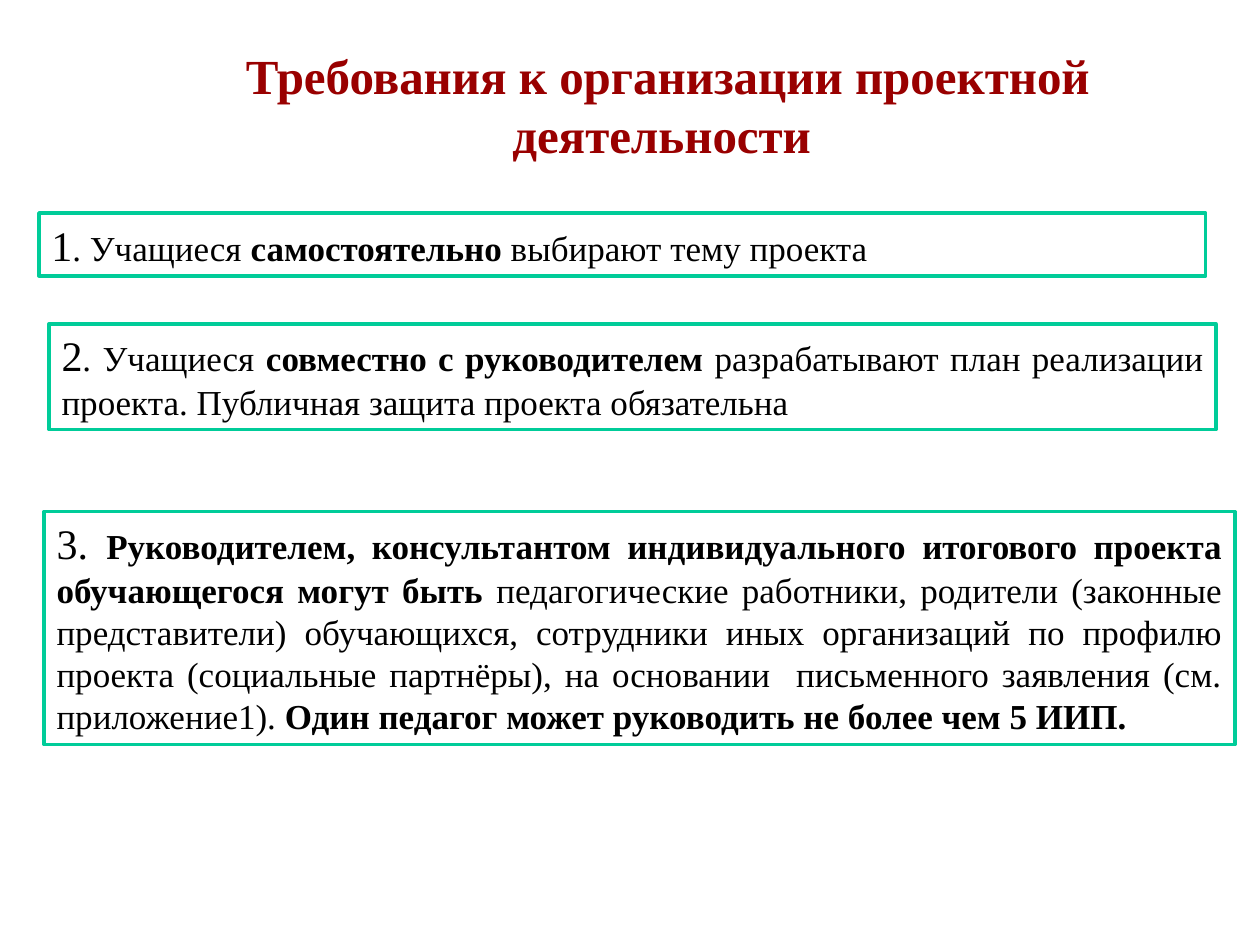
from pptx import Presentation
from pptx.dml.color import RGBColor
from pptx.enum.shapes import MSO_SHAPE as SHAPE
from pptx.enum.text import MSO_ANCHOR as ANCHOR, MSO_AUTO_SIZE as AUTO, PP_ALIGN as ALIGN
from pptx.util import Inches, Pt

FONT = "Times New Roman"
TITLE_RED, GREEN, WHITE, BLACK = "990000", "00CC99", "FFFFFF", "000000"

# left, top, width, height, runs as (text, size, bold)
REQUIREMENTS = [
    (0.31, 1.69, 9.26, 0.5, [
        ("1", 24, False),
        (". Учащиеся ", 20, False),
        ("самостоятельно", 20, True),
        (" выбирают тему проекта", 20, False)]),
    (0.39, 2.57, 9.26, 0.84, [
        ("2", 24, False),
        (". Учащиеся ", 20, False),
        ("совместно с руководителем ", 20, True),
        ("разрабатывают план реализации проекта. "
         "Публичная защита проекта обязательна ", 20, False)]),
    (0.35, 4.06, 9.45, 1.85, [
        ("3. ", 24, False),
        ("Руководителем, консультантом индивидуального итогового проекта "
         "обучающегося могут быть ", 20, True),
        ("педагогические работники, родители (законные представители) "
         "обучающихся, сотрудники иных организаций по профилю проекта "
         "(социальные партнёры), на основании  письменного заявления "
         "(см. приложение1). ", 20, False),
        ("Один педагог может руководить не более чем 5 ИИП.", 20, True)]),
]


def rgb(value):
    return RGBColor.from_string(value)


class SlideBuilder:
    def __init__(self, slide, font):
        self.s = slide
        self.font = font

    def format_run(self, r, size, bold, color):
        r.font.name = self.font
        r.font.size = Pt(size)
        r.font.bold = bold
        r.font.color.rgb = rgb(color)

    def title(self, left, top, width, height, text):
        sp = self.s.shapes.add_textbox(*map(Inches, (left, top, width, height)))
        tf = sp.text_frame
        tf.word_wrap = True
        tf.vertical_anchor = ANCHOR.MIDDLE
        tf.text = text
        p = tf.paragraphs[0]
        p.alignment = ALIGN.CENTER
        self.format_run(p.runs[0], 28, True, TITLE_RED)

    def requirement(self, left, top, width, height, runs):
        sp = self.s.shapes.add_shape(
            SHAPE.RECTANGLE, *map(Inches, (left, top, width, height)))
        sp.shadow.inherit = False
        sp.fill.solid()
        sp.fill.fore_color.rgb = rgb(WHITE)
        sp.line.color.rgb = rgb(GREEN)
        sp.line.width = Pt(2)
        tf = sp.text_frame
        tf.word_wrap = True
        tf.auto_size = AUTO.SHAPE_TO_FIT_TEXT
        tf.vertical_anchor = ANCHOR.TOP
        p = tf.paragraphs[0]
        p.alignment = ALIGN.JUSTIFY
        for text, size, bold in runs:
            r = p.add_run()
            r.text = text
            self.format_run(r, size, bold, BLACK)


def main():
    prs = Presentation()
    prs.slide_width, prs.slide_height = Inches(10), Inches(7.5)
    builder = SlideBuilder(prs.slides.add_slide(prs.slide_layouts[6]), FONT)
    builder.title(1.05, 0.28, 8.5, 1.1,
                  "Требования к организации проектной деятельности ")
    for requirement in REQUIREMENTS:
        builder.requirement(*requirement)
    prs.save("out.pptx")


if __name__ == "__main__":
    main()
